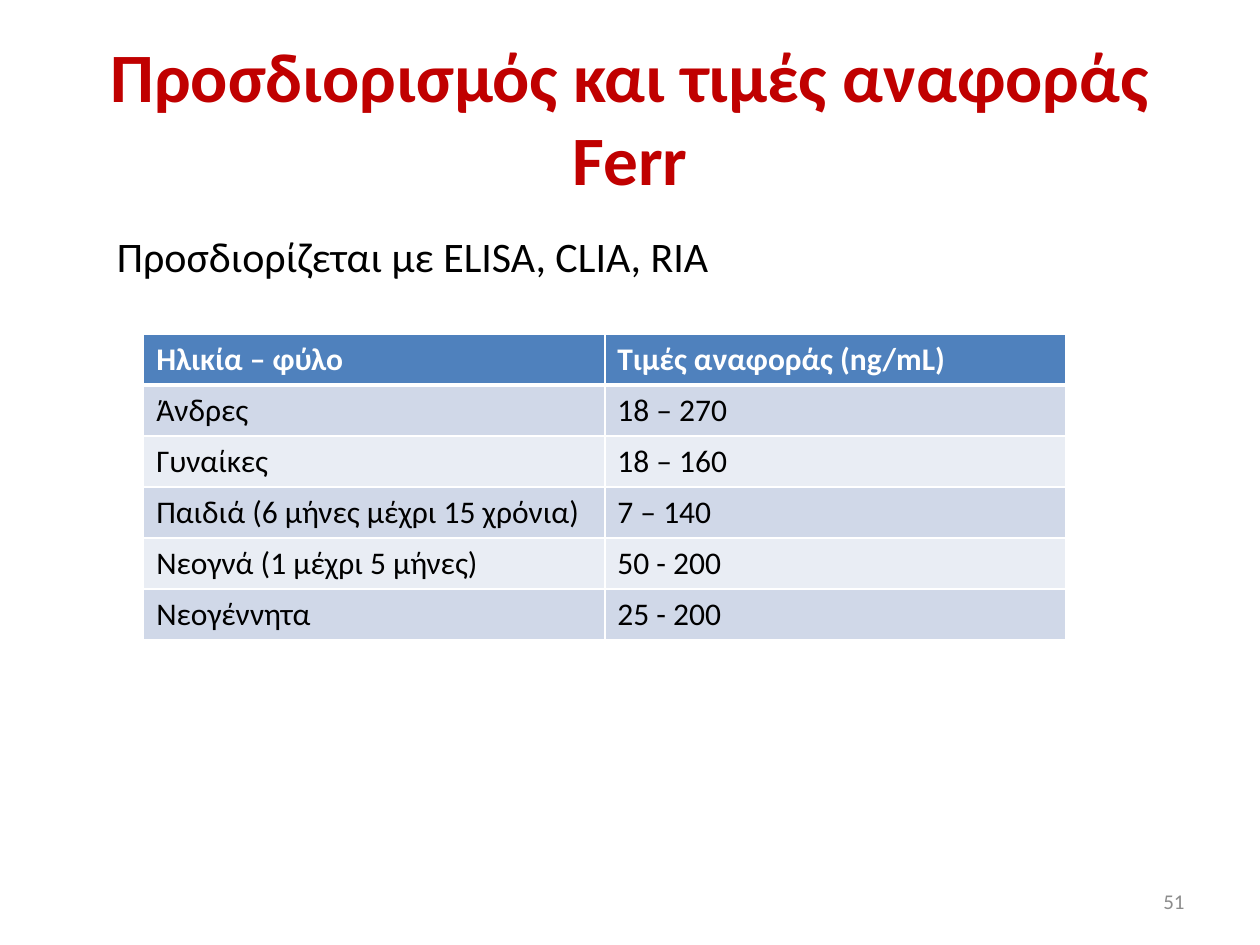
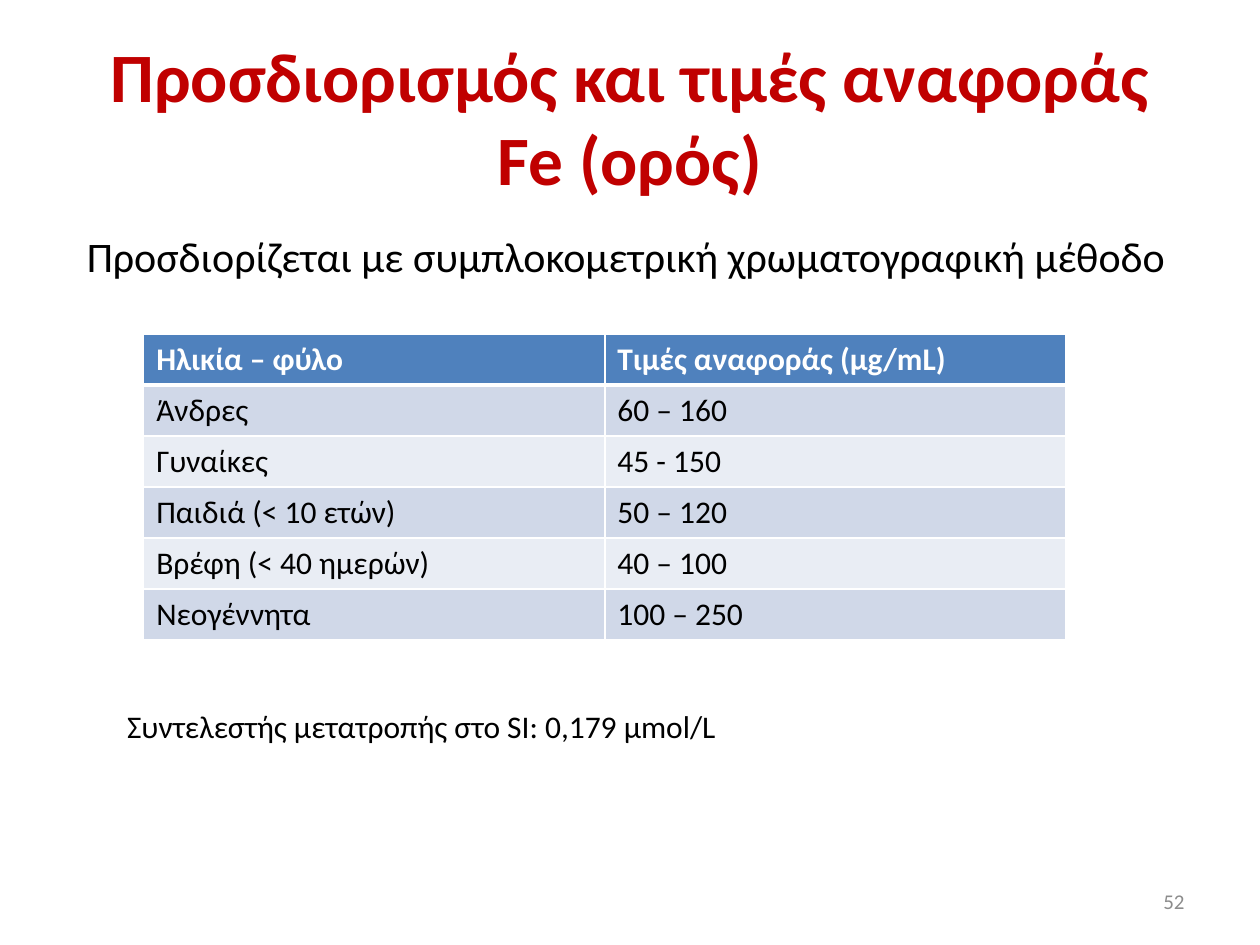
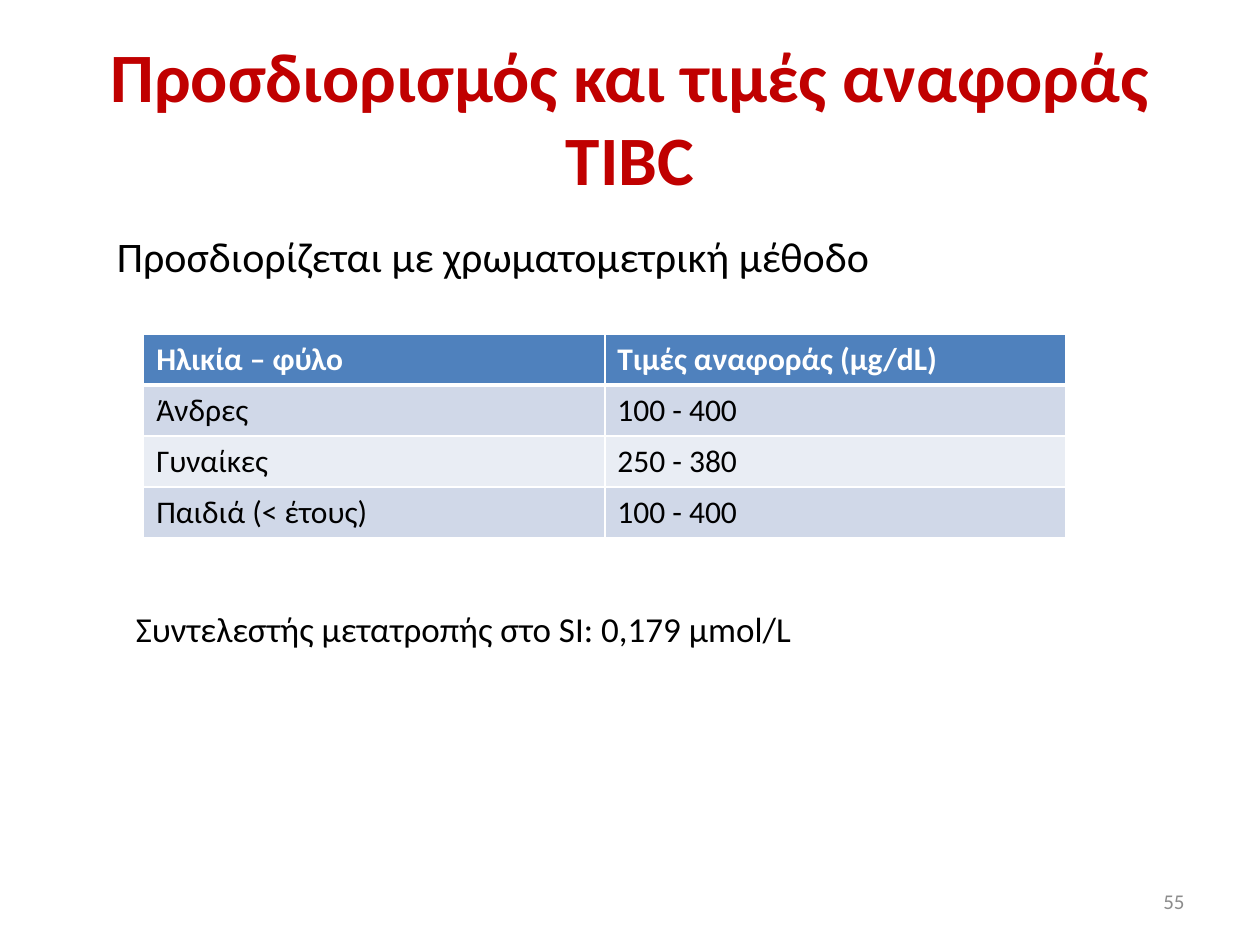
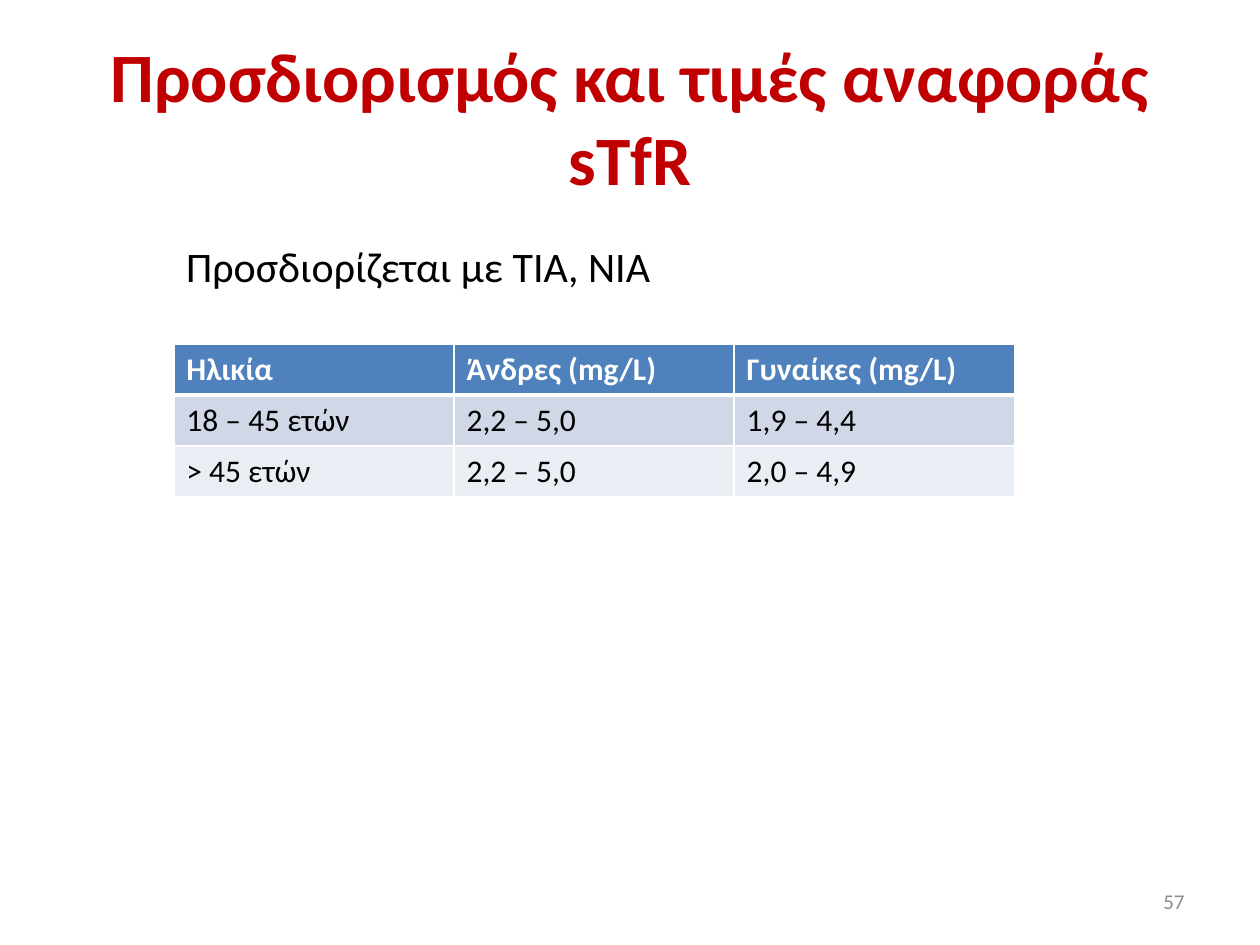
import pptx
import pptx.util
import pptx.dml.color
import pptx.enum.text
import pptx.oxml.ns
import lxml.etree

Inches = pptx.util.Inches
Pt = pptx.util.Pt
ALIGN = pptx.enum.text.PP_ALIGN
ANCHOR = pptx.enum.text.MSO_ANCHOR
qn = pptx.oxml.ns.qn

FONT = "Calibri"
RED, GREY, BLACK, WHITE = "C00000", "8C8C8C", "000000", "FFFFFF"
HEADER_BLUE = "4F81BD"
BANDS = ["D0D8E8", "E9EDF4"]
ROW_HEIGHT = 2.43 / 6
TITLE = "Προσδιορισμός και τιμές αναφοράς"
METHOD = "Προσδιορίζεται με"
CONVERSION = "Συντελεστής μετατροπής στο SI: 0,179 μmol/L"
AGE_SEX = "Hλικία – φύλο"


def style(para, size, color, bold=False, align=ALIGN.LEFT):
    para.alignment = align
    para.font.name = FONT
    para.font.size = Pt(size)
    para.font.bold = bold
    para.font.color.rgb = pptx.dml.color.RGBColor.from_string(color)


def add_text(page, place, text, size, color=BLACK, bold=False,
             align=ALIGN.LEFT, anchor=ANCHOR.TOP):
    box = page.shapes.add_textbox(*[Inches(length) for length in place])
    box.text_frame.word_wrap = True
    box.text_frame.vertical_anchor = anchor
    para = box.text_frame.paragraphs[0]
    para.text = text
    style(para, size, color, bold, align)


pages = [
    {
        "subject": "Ferr", "number": 51,
        "method": "ELISA, CLIA, RIA", "method_at": (0.83, 1.78, 8.5, 0.5),
        "table_at": (1.14, 2.65, 7.32),
        "rows": [
            (AGE_SEX, "Τιμές αναφοράς (ng/mL)"),
            ("Άνδρες", "18 – 270"),
            ("Γυναίκες", "18 – 160"),
            ("Παιδιά (6 μήνες μέχρι 15 χρόνια)", "7 – 140"),
            ("Nεογνά (1 μέχρι 5 μήνες)", "50 - 200"),
            ("Νεογέννητα", "25 - 200"),
        ],
    },
    {
        "subject": "Fe (ορός)", "number": 52,
        "method": "συμπλοκομετρική χρωματογραφική μέθοδο",
        "method_at": (0.59, 1.78, 8.98, 0.5),
        "table_at": (1.14, 2.65, 7.32),
        "rows": [
            (AGE_SEX, "Τιμές αναφοράς (μg/mL)"),
            ("Άνδρες", "60 – 160"),
            ("Γυναίκες", "45 - 150"),
            ("Παιδιά (< 10 ετών)", "50 – 120"),
            ("Βρέφη (< 40 ημερών)", "40 – 100"),
            ("Νεογέννητα", "100 – 250"),
        ],
        "conversion_at": (0.91, 5.56, 8.35, 0.4), "conversion_size": 18,
    },
    {
        "subject": "ΤΙΒC", "number": 55,
        "method": "χρωματομετρική μέθοδο", "method_at": (0.83, 1.78, 8.5, 0.5),
        "table_at": (1.14, 2.65, 7.32),
        "rows": [
            (AGE_SEX, "Τιμές αναφοράς (μg/dL)"),
            ("Άνδρες", "100 - 400"),
            ("Γυναίκες", "250 - 380"),
            ("Παιδιά (< έτους)", "100 - 400"),
        ],
        "conversion_at": (0.98, 4.77, 7.01, 0.44), "conversion_size": 20,
    },
    {
        "subject": "sTfR", "number": 57,
        "method": "TIA, NIA", "method_at": (1.38, 1.86, 7.8, 0.5),
        "table_at": (1.38, 2.73, 6.67),
        "rows": [
            ("Hλικία", "Άνδρες (mg/L)", "Γυναίκες (mg/L)"),
            ("18 – 45 ετών", "2,2 – 5,0", "1,9 – 4,4"),
            ("> 45 ετών", "2,2 – 5,0", "2,0 – 4,9"),
        ],
    },
]

deck = pptx.Presentation()
deck.slide_width = Inches(10)
deck.slide_height = Inches(7.5)

for content in pages:
    page = deck.slides.add_slide(deck.slide_layouts[6])
    add_text(page, (0.5, 0.3, 9, 1.25), f"{TITLE} {content['subject']}", 39.6,
             RED, True, ALIGN.CENTER, ANCHOR.MIDDLE)
    add_text(page, (7.17, 6.95, 2.33, 0.4), str(content["number"]), 12,
             GREY, align=ALIGN.RIGHT, anchor=ANCHOR.MIDDLE)
    add_text(page, content["method_at"], f"{METHOD} {content['method']}", 24)

    rows = content["rows"]
    left, top, width = content["table_at"]
    table = page.shapes.add_table(
        len(rows), len(rows[0]), Inches(left), Inches(top),
        Inches(width), Inches(ROW_HEIGHT * len(rows))).table
    for row_index, row in enumerate(rows):
        header = row_index == 0
        fill = HEADER_BLUE if header else BANDS[(row_index - 1) % 2]
        for column_index, text in enumerate(row):
            cell = table.cell(row_index, column_index)
            cell.text = text
            style(cell.text_frame.paragraphs[0], 18, WHITE if header else BLACK, header)
            cell.fill.solid()
            cell.fill.fore_color.rgb = pptx.dml.color.RGBColor.from_string(fill)
            properties = cell._tc.get_or_add_tcPr()
            for position, side in enumerate(["lnL", "lnR", "lnT", "lnB"]):
                under_header = (row_index, side) in [(0, "lnB"), (1, "lnT")]
                border = lxml.etree.Element(qn(f"a:{side}"), w=str(Pt(3 if under_header else 1)))
                paint = lxml.etree.SubElement(border, qn("a:solidFill"))
                lxml.etree.SubElement(paint, qn("a:srgbClr"), val=WHITE)
                properties.insert(position, border)

    if "conversion_at" in content:
        add_text(page, content["conversion_at"], CONVERSION, content["conversion_size"])

deck.save("out.pptx")
